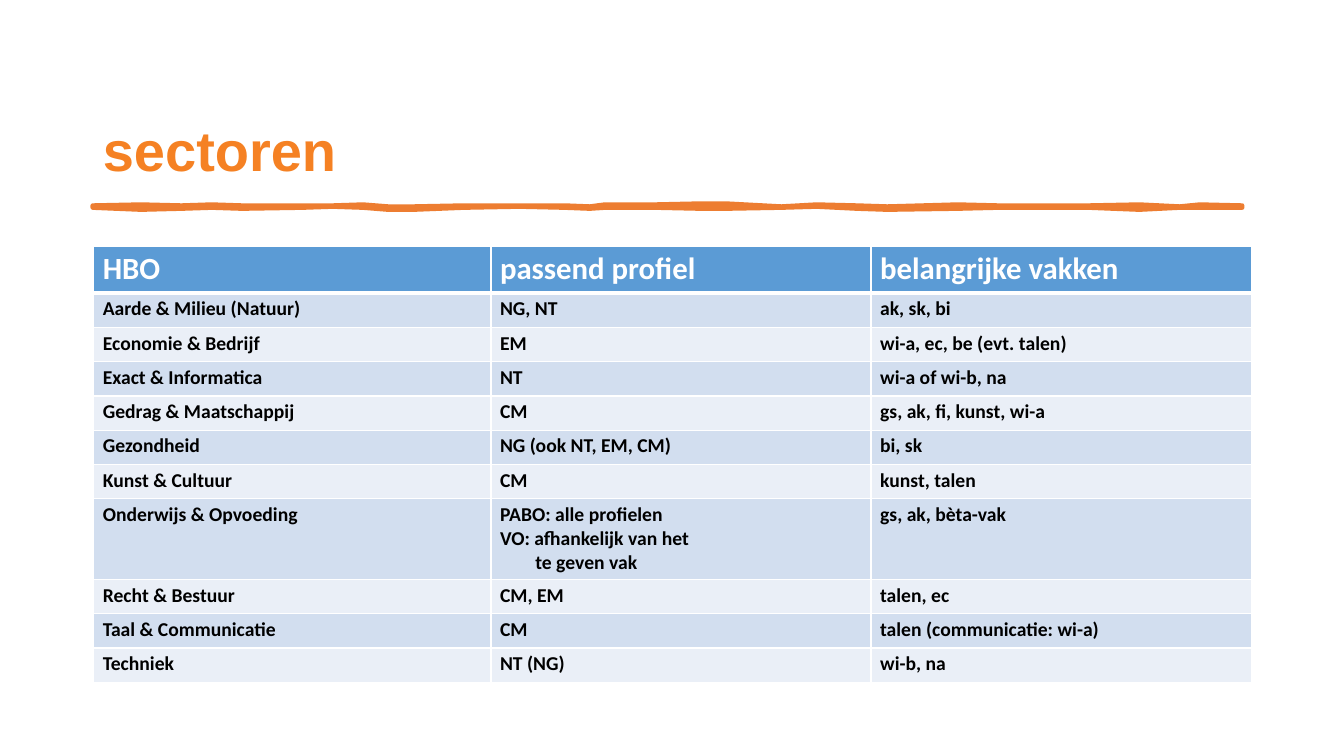
"""Build the slide 'sectoren': HBO sectors with matching profiles and subjects."""
import lxml.etree
import pptx
import pptx.dml.color
import pptx.enum.text
import pptx.oxml.ns
import pptx.util

RGB = pptx.dml.color.RGBColor
TITLE_ORANGE = RGB(0xF5, 0x81, 0x23)
BRUSH_ORANGE = RGB(0xED, 0x7D, 0x31)
HEADER_BLUE = RGB(0x5B, 0x9B, 0xD5)
BANDS = (RGB(0xEA, 0xEF, 0xF7), RGB(0xD2, 0xDE, 0xEF))
WHITE = RGB(0xFF, 0xFF, 0xFF)
BLACK = RGB(0, 0, 0)

TITLE = "sectoren"
SECTORS = [
    ("HBO", "passend profiel", "belangrijke vakken"),
    ("Aarde & Milieu (Natuur)", "NG, NT", "ak, sk, bi"),
    ("Economie & Bedrijf", "EM", "wi-a, ec, be (evt. talen)"),
    ("Exact & Informatica", "NT", "wi-a of wi-b, na"),
    ("Gedrag & Maatschappij", "CM", "gs, ak, fi, kunst, wi-a"),
    ("Gezondheid", "NG (ook NT, EM, CM)", "bi, sk"),
    ("Kunst & Cultuur", "CM", "kunst, talen"),
    ("Onderwijs & Opvoeding",
     "PABO: alle profielen\nVO: afhankelijk van het\nte geven vak", "gs, ak, bèta-vak"),
    ("Recht & Bestuur", "CM, EM", "talen, ec"),
    ("Taal & Communicatie", "CM", "talen (communicatie: wi-a)"),
    ("Techniek", "NT (NG)", "wi-b, na"),
]
INDENTED = "te geven vak"
COLUMN_WIDTHS = (3.94, 3.77, 3.77)
HEADER_HEIGHT, LINE_HEIGHT, ROW_PADDING = 0.47, 0.23, 0.11
HEADER_FONT = {"name": "Calibri", "size": pptx.util.Pt(22), "bold": True}
BODY_FONT = {"name": "Calibri", "size": pptx.util.Pt(14), "bold": True}
TITLE_FONT = {"name": "Arial", "size": pptx.util.Pt(40), "bold": True}
CELL_MARGINS = {"margin_left": 0.09, "margin_right": 0.09,
                "margin_top": 0.04, "margin_bottom": 0.04}
BRUSH_EDGES = [
    (0.92, 2.04, 2.06), (1.4, 2.03, 2.08), (1.8, 2.04, 2.07), (2.1, 2.03, 2.06),
    (2.4, 2.04, 2.07), (3.0, 2.04, 2.06), (3.3, 2.04, 2.05), (3.6, 2.03, 2.06),
    (3.85, 2.05, 2.08), (4.1, 2.05, 2.08), (4.6, 2.04, 2.06), (5.15, 2.04, 2.05),
    (5.6, 2.04, 2.06), (5.85, 2.05, 2.07), (6.0, 2.03, 2.06), (6.5, 2.03, 2.06),
    (6.95, 2.02, 2.07), (7.2, 2.02, 2.07), (7.75, 2.05, 2.06), (8.1, 2.03, 2.05),
    (8.5, 2.04, 2.07), (8.8, 2.05, 2.08), (9.5, 2.03, 2.07), (9.9, 2.04, 2.06),
    (10.4, 2.04, 2.06), (10.8, 2.04, 2.06), (11.3, 2.03, 2.08), (11.7, 2.05, 2.06),
    (11.9, 2.03, 2.06), (12.32, 2.04, 2.06),
]


def style(font, values, color):
    for name, value in values.items():
        setattr(font, name, value)
    font.color.rgb = color


def add_borders(cell, is_header):
    properties = cell._tc.get_or_add_tcPr()
    for side in "LRTB":
        points = 3 if is_header and side == "B" else 1
        border = lxml.etree.SubElement(
            properties, pptx.oxml.ns.qn("a:ln" + side), w=str(pptx.util.Pt(points)))
        paint = lxml.etree.SubElement(border, pptx.oxml.ns.qn("a:solidFill"))
        lxml.etree.SubElement(paint, pptx.oxml.ns.qn("a:srgbClr"), val=str(WHITE))


def add_title(slide):
    title = slide.shapes.title
    box = {"left": 0.92, "top": 0.8, "width": 11.5, "height": 1.45}
    for name, inches in box.items():
        setattr(title, name, pptx.util.Inches(inches))
    title.text_frame.text = TITLE
    title.text_frame.vertical_anchor = pptx.enum.text.MSO_ANCHOR.MIDDLE
    heading = title.text_frame.paragraphs[0]
    heading.alignment = pptx.enum.text.PP_ALIGN.LEFT
    heading.line_spacing = 0.9
    style(heading.runs[0].font, TITLE_FONT, TITLE_ORANGE)


def add_brush_stroke(slide):
    upper = [(x, top) for x, top, bottom in BRUSH_EDGES]
    lower = [(x, bottom) for x, top, bottom in reversed(BRUSH_EDGES)]
    outline = [(pptx.util.Inches(x), pptx.util.Inches(y)) for x, y in upper + lower]
    builder = slide.shapes.build_freeform(*outline[0])
    builder.add_line_segments(outline[1:], close=True)
    stroke = builder.convert_to_shape()
    stroke.shadow.inherit = False
    stroke.fill.solid()
    stroke.fill.fore_color.rgb = BRUSH_ORANGE
    stroke.line.color.rgb = BRUSH_ORANGE
    stroke.line.width = pptx.util.Pt(3.25)
    lxml.etree.SubElement(stroke.line._get_or_add_ln(), pptx.oxml.ns.qn("a:round"))


def add_sectors(slide):
    heights = [HEADER_HEIGHT] + [
        ROW_PADDING + LINE_HEIGHT * max(text.count("\n") + 1 for text in sector)
        for sector in SECTORS[1:]]
    table = slide.shapes.add_table(
        len(SECTORS), len(COLUMN_WIDTHS), pptx.util.Inches(0.93), pptx.util.Inches(2.44),
        pptx.util.Inches(sum(COLUMN_WIDTHS)), pptx.util.Inches(sum(heights))).table
    for column, width in zip(table.columns, COLUMN_WIDTHS):
        column.width = pptx.util.Inches(width)
    for number, (sector, height) in enumerate(zip(SECTORS, heights)):
        table.rows[number].height = pptx.util.Inches(height)
        is_header = number == 0
        for position, text in enumerate(sector):
            cell = table.cell(number, position)
            cell.text = text
            for name, inches in CELL_MARGINS.items():
                setattr(cell, name, pptx.util.Inches(inches))
            add_borders(cell, is_header)
            cell.fill.solid()
            cell.fill.fore_color.rgb = HEADER_BLUE if is_header else BANDS[number % 2]
            for paragraph in cell.text_frame.paragraphs:
                if paragraph.text == INDENTED:
                    paragraph._p.get_or_add_pPr().set("marL", str(pptx.util.Inches(0.35)))
                style(paragraph.runs[0].font, HEADER_FONT if is_header else BODY_FONT,
                      WHITE if is_header else BLACK)


def main():
    deck = pptx.Presentation()
    deck.slide_width = pptx.util.Inches(13.33)
    deck.slide_height = pptx.util.Inches(7.5)
    slide = deck.slides.add_slide(deck.slide_layouts[5])
    add_title(slide)
    add_brush_stroke(slide)
    add_sectors(slide)
    deck.save("out.pptx")


if __name__ == "__main__":
    main()
